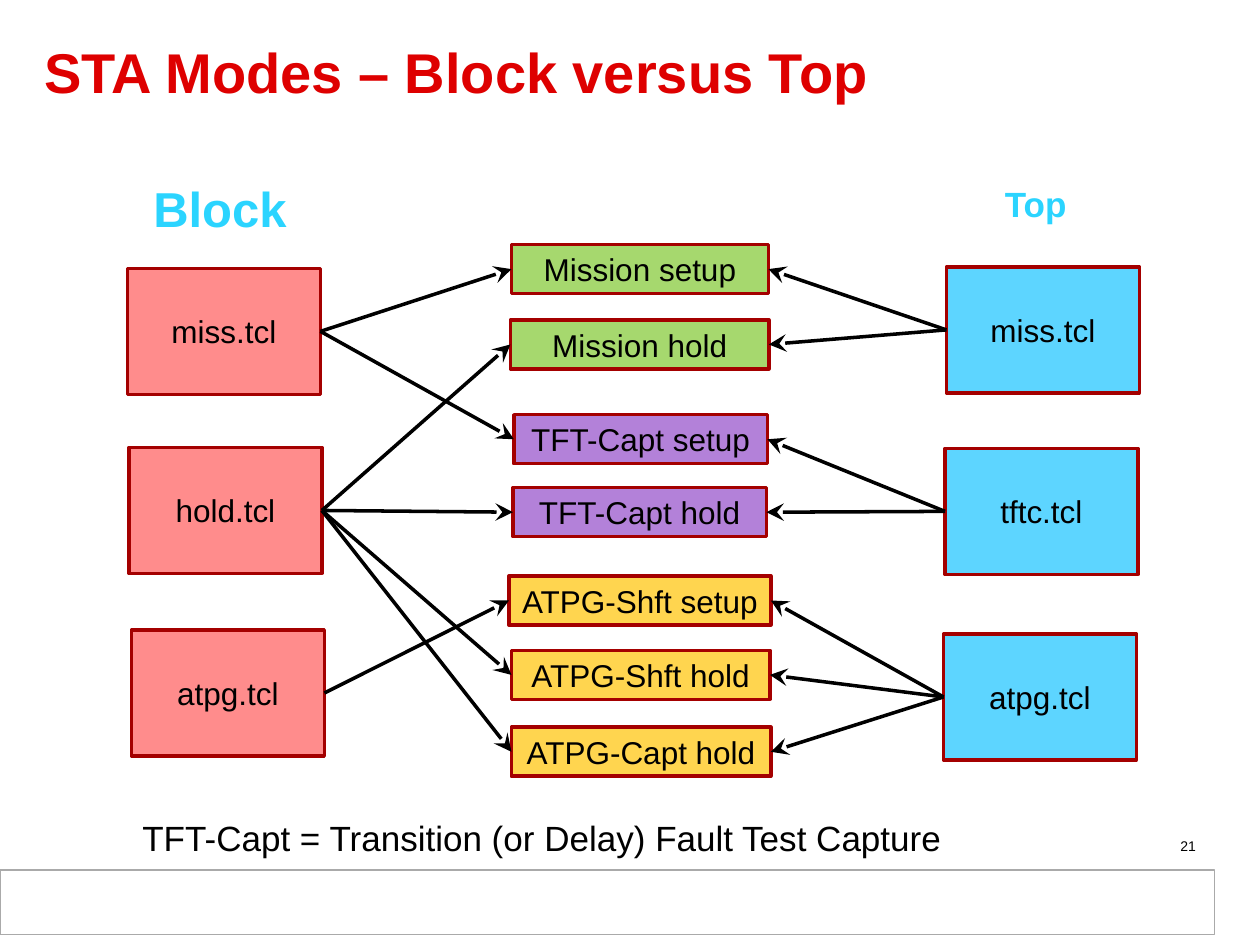
from collections import namedtuple

from lxml.etree import SubElement
from pptx import Presentation
from pptx.dml.color import RGBColor
from pptx.enum.shapes import MSO_CONNECTOR as Connector, MSO_SHAPE as Preset
from pptx.enum.text import MSO_ANCHOR as Anchor, PP_ALIGN as Align
from pptx.oxml.ns import qn
from pptx.util import Cm, Pt

Box = namedtuple("Box", "left top width height")
LEFT_SITE, RIGHT_SITE = 1, 3
BLACK, WHITE, TITLE_RED, CYAN = "000000", "FFFFFF", "DE0000", "2BD4FF"
PINK, BLUE, BORDER = "FF8C8C", "5DD5FF", "A40000"
GREEN, PURPLE, YELLOW = "A6D86E", "B381D9", "FFD54F"

BLOCK_SCRIPTS = [("miss.tcl", 0, 0), ("hold.tcl", 0.03, 3.61), ("atpg.tcl", 0.08, 7.29)]
TOP_SCRIPTS = [("miss.tcl", 0.06, 0), ("tftc.tcl", 0.03, 3.66), ("atpg.tcl", 0, 7.4)]
MODES = [
    ("Mission setup", GREEN, 0.05, 0, 5.18),
    ("Mission hold", GREEN, 0.03, 1.52, 5.21),
    ("TFT-Capt setup", PURPLE, 0.1, 3.43, 5.11),
    ("TFT-Capt hold", PURPLE, 0.08, 4.9, 5.11),
    ("ATPG-Shft setup", YELLOW, 0, 6.68, 5.28),
    ("ATPG-Shft hold", YELLOW, 0.05, 8.18, 5.21),
    ("ATPG-Capt hold", YELLOW, 0.05, 9.73, 5.23),
]
BLOCK_LINKS = {
    "miss.tcl": ["Mission setup", "TFT-Capt setup"],
    "hold.tcl": ["Mission hold", "TFT-Capt hold", "ATPG-Shft hold", "ATPG-Capt hold"],
    "atpg.tcl": ["ATPG-Shft setup"],
}
TOP_LINKS = {
    "miss.tcl": ["Mission setup", "Mission hold"],
    "tftc.tcl": ["TFT-Capt setup", "TFT-Capt hold"],
    "atpg.tcl": ["ATPG-Shft setup", "ATPG-Shft hold", "ATPG-Capt hold"],
}


def color(hex_string):
    return RGBColor.from_string(hex_string)


def write(shape, text, size, hex_color=BLACK, bold=False, align=Align.CENTER, anchor=Anchor.MIDDLE):
    frame = shape.text_frame
    frame.word_wrap = False
    frame.vertical_anchor = anchor
    paragraph = frame.paragraphs[0]
    paragraph.text = text
    paragraph.alignment = align
    font = paragraph.font
    font.name, font.size, font.bold = "Arial", Pt(size), bold
    font.color.rgb = color(hex_color)
    return paragraph


def add_text(slide, box, text, size, **style):
    shape = slide.shapes.add_textbox(*map(Cm, box))
    return write(shape, text, size, **style)


def add_box(slide, box, fill, line, line_width):
    shape = slide.shapes.add_shape(Preset.RECTANGLE, *map(Cm, box))
    shape.shadow.inherit = False
    shape.fill.solid()
    shape.fill.fore_color.rgb = color(fill)
    shape.line.color.rgb = color(line)
    shape.line.width = Pt(line_width)
    return shape


def add_label_box(slide, box, text, fill):
    shape = add_box(slide, box, fill, BORDER, 2)
    write(shape, text, 18)
    return shape


def add_script_column(slide, box, scripts, fill):
    return {
        name: add_label_box(slide, Box(box.left + x, box.top + y, box.width, 2.54), name, fill)
        for name, x, y in scripts
    }


def add_mode_column(slide, box):
    return {
        name: add_label_box(slide, Box(box.left + x, box.top + y, width, 0.99), name, fill)
        for name, fill, x, y, width in MODES
    }


def add_arrows(slide, scripts, modes, links, script_site, mode_site):
    for script, targets in links.items():
        for target in targets:
            arrow = slide.shapes.add_connector(Connector.STRAIGHT, 0, 0, 0, 0)
            arrow.begin_connect(scripts[script], script_site)
            arrow.end_connect(modes[target], mode_site)
            arrow.line.color.rgb = color(BLACK)
            arrow.line.width = Pt(2)
            line = arrow.line._get_or_add_ln()
            SubElement(line, qn("a:tailEnd"), type="stealth", w="lg", len="lg")
            SubElement(arrow._element.spPr, qn("a:effectLst"))


def add_title(slide, box):
    title = add_text(slide, box, "STA Modes – Block versus Top", 32,
                     hex_color=TITLE_RED, bold=True, align=Align.LEFT)
    title.line_spacing = 0.85


def add_footer(slide, box):
    add_box(slide, Box(box.left, box.top + 0.78, box.width, 1.3), WHITE, "AAAAAA", 0.75)
    add_text(slide, Box(box.left + 18.44, box.top, 5.92, 0.58), "21", 8,
             align=Align.RIGHT, anchor=Anchor.TOP)


def add_diagram(slide, box):
    left, top = box.left, box.top
    heading = {"hex_color": CYAN, "bold": True, "anchor": Anchor.TOP}
    add_text(slide, Box(left + 0.25, top, 3.23, 1.45), "Block", 28, **heading)
    add_text(slide, Box(left + 17.14, top + 0.08, 2.34, 1.45), "Top", 20, **heading)
    block = add_script_column(slide, Box(left, top + 1.93, 3.89, 9.83), BLOCK_SCRIPTS, PINK)
    top_level = add_script_column(slide, Box(left + 16.45, top + 1.9, 3.89, 9.94), TOP_SCRIPTS, BLUE)
    modes = add_mode_column(slide, Box(left + 7.69, top + 1.45, 5.28, 10.72))
    add_arrows(slide, block, modes, BLOCK_LINKS, RIGHT_SITE, LEFT_SITE)
    add_arrows(slide, top_level, modes, TOP_LINKS, LEFT_SITE, RIGHT_SITE)
    add_text(slide, Box(left + 0.05, top + 12.85, 16.74, 1.12),
             "TFT-Capt = Transition (or Delay) Fault Test Capture", 20,
             align=Align.LEFT, anchor=Anchor.TOP)


def main():
    presentation = Presentation()
    presentation.slide_width, presentation.slide_height = Cm(25.4), Cm(19.05)
    slide = presentation.slides.add_slide(presentation.slide_layouts[6])
    add_footer(slide, Box(0, 16.76, 24.49, 2.08))
    add_title(slide, Box(0.64, 0.41, 23.5, 2.26))
    add_diagram(slide, Box(2.57, 3.48, 20.4, 13.97))
    presentation.save("out.pptx")


if __name__ == "__main__":
    main()
